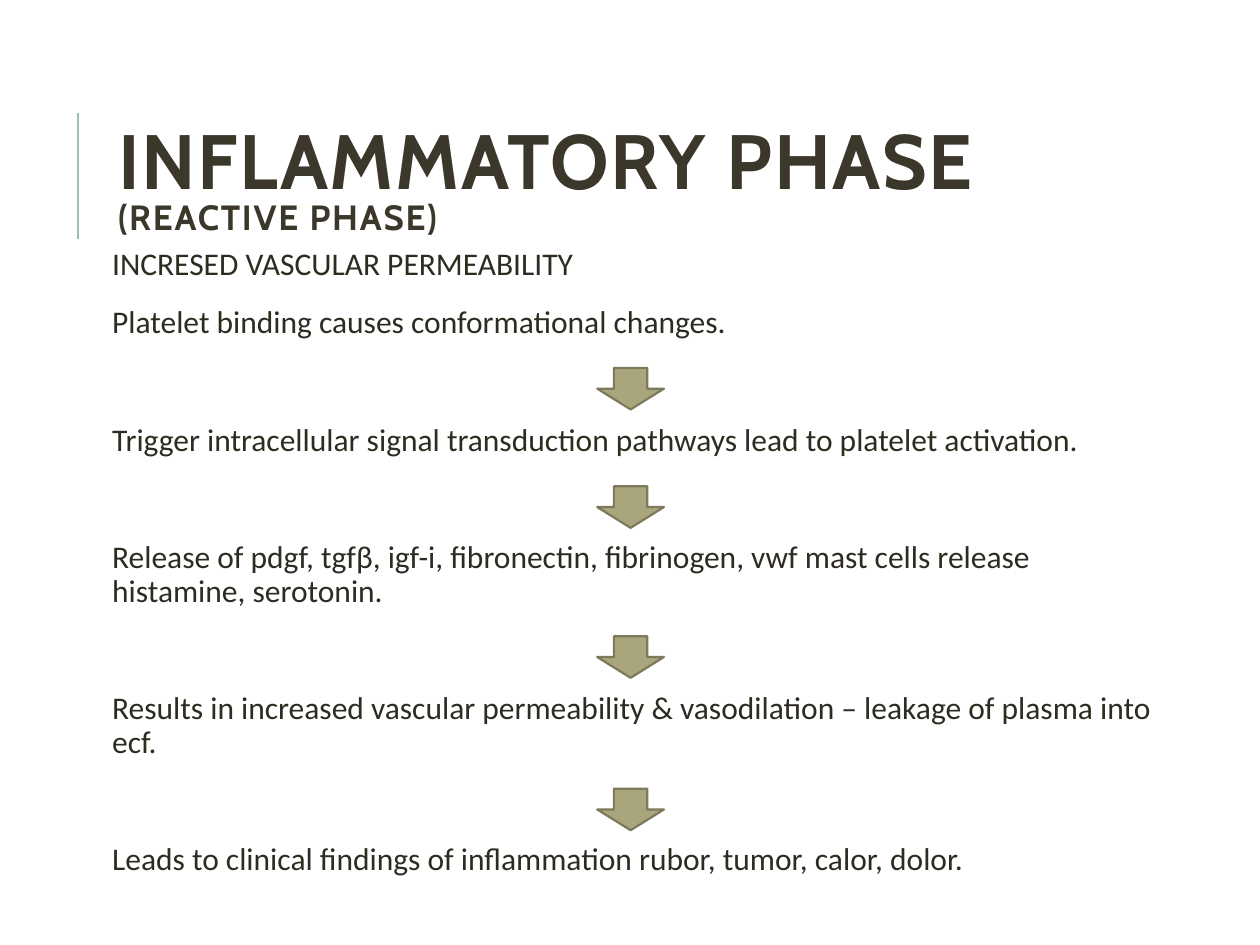
from lxml import etree
from pptx import Presentation
from pptx.dml.color import RGBColor
from pptx.enum.shapes import MSO_CONNECTOR, MSO_SHAPE
from pptx.enum.text import MSO_ANCHOR
from pptx.oxml.ns import qn
from pptx.util import Inches, Pt

STRAIGHT = MSO_CONNECTOR.STRAIGHT
DOWN_ARROW = MSO_SHAPE.DOWN_ARROW
MIDDLE = MSO_ANCHOR.MIDDLE

RULE = RGBColor(0x9C, 0xBE, 0xBD)
TITLE = RGBColor(0x3B, 0x37, 0x2A)
BODY = RGBColor(0x2E, 0x2B, 0x21)
ARROW_FILL = RGBColor(0xA9, 0xA5, 0x7C)
ARROW_LINE = RGBColor(0x7D, 0x7A, 0x5C)

TITLE_RUNS = [("INFLAMMATORY PHASE", 44), (" (REACTIVE PHASE)", 20)]
HEADING = "INCRESED VASCULAR PERMEABILITY"
STEPS = [
    "Platelet binding causes conformational changes.",
    "Trigger intracellular signal transduction pathways lead to platelet activation.",
    "Release of pdgf, tgfβ, igf-i, fibronectin, fibrinogen, vwf mast cells release "
    "histamine, serotonin.",
    "Results in increased vascular permeability & vasodilation – leakage of plasma into ecf.",
    "Leads to clinical findings of inflammation rubor, tumor, calor, dolor.",
]
ARROW_TOPS = [2.92, 3.86, 5.05, 6.26]
PARAGRAPH_GAP = 12
ARROW_GAP = 45.5


def add_text_frame(s, left, top, width, height):
    box = s.shapes.add_textbox(Inches(left), Inches(top), Inches(width), Inches(height))
    tf = box.text_frame
    tf.word_wrap = True
    return tf


def style_run(r, font, size, color):
    r.font.name = font
    r.font.size = Pt(size)
    r.font.color.rgb = color


def add_rule(s):
    line = s.shapes.add_connector(
        STRAIGHT, Inches(0.62), Inches(1.9), Inches(0.62), Inches(0.9))
    line.line.color.rgb = RULE
    line.line.width = Pt(1.5)
    etree.SubElement(line._element.spPr, qn("a:effectLst"))


def add_title(s):
    tf = add_text_frame(s, 0.84, 0.64, 7.97, 1.64)
    tf.vertical_anchor = MIDDLE
    p = tf.paragraphs[0]
    p.line_spacing = 0.8
    for text, size in TITLE_RUNS:
        r = p.add_run()
        r.text = text
        style_run(r, "Cabin", size, TITLE)
        r.font.bold = True
        r._r.get_or_add_rPr().set("spc", "100")


def add_steps(s):
    tf = add_text_frame(s, 0.84, 1.92, 8.41, 4.98)
    tf.margin_left = tf.margin_right = Inches(0.05)
    tf.margin_top = tf.margin_bottom = Inches(0.05)
    tf.text = "\n".join([HEADING] + STEPS)
    for i, p in enumerate(tf.paragraphs):
        p.line_spacing = 0.9
        p.space_before = Pt(ARROW_GAP if i > 1 else PARAGRAPH_GAP)
        p.space_after = Pt(2)
        style_run(p.runs[0], "Calibri", 18, BODY)


def add_arrow(s, top):
    arrow = s.shapes.add_shape(
        DOWN_ARROW, Inches(4.74), Inches(top), Inches(0.53), Inches(0.33))
    arrow.shadow.inherit = False
    arrow.fill.solid()
    arrow.fill.fore_color.rgb = ARROW_FILL
    arrow.line.color.rgb = ARROW_LINE
    arrow.line.width = Pt(1.25)


def main():
    prs = Presentation()
    prs.slide_width = Inches(10)
    prs.slide_height = Inches(7.5)
    s = prs.slides.add_slide(prs.slide_layouts[6])
    add_rule(s)
    add_title(s)
    add_steps(s)
    for top in ARROW_TOPS:
        add_arrow(s, top)
    prs.save("out.pptx")


if __name__ == "__main__":
    main()
